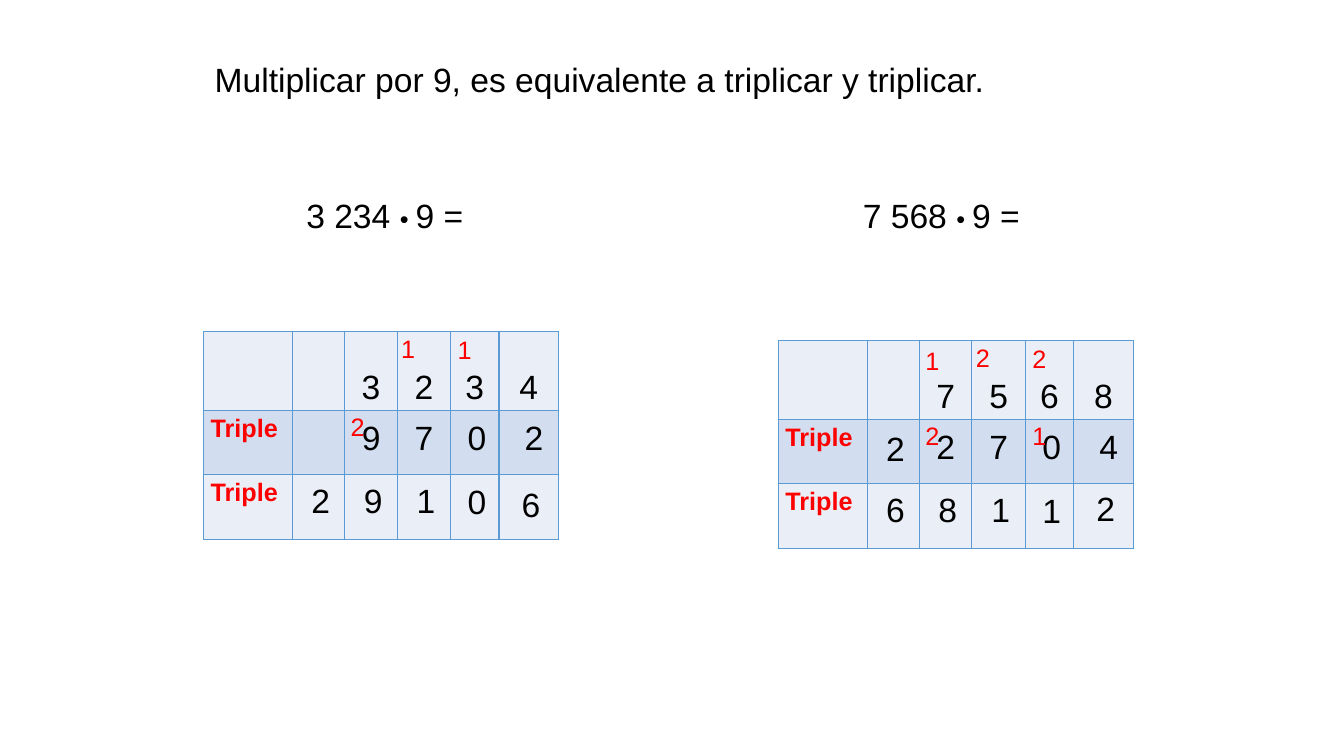
from itertools import accumulate
from lxml.etree import SubElement
from pptx import Presentation
from pptx.dml.color import RGBColor
from pptx.enum.text import MSO_AUTO_SIZE, PP_ALIGN
from pptx.oxml.ns import qn
from pptx.util import Inches, Pt

TITLE = "Multiplicar por 9, es equivalente a triplicar y triplicar."
LABELS = ["", "Triple", "Triple"]
EXERCISES = [
    {
        "at": (2.02, 3.29),
        "question": (2.94, "3 234 "),
        "rows": ["  3234", "  9702", " 29106"],
        "carries": [(0, 3, "1", 0), (0, 4, "1", 0.01), (1, 2, "2", 0)],
        "shifts": {(2, 4): 0.01, (2, 5): 0.04},
    },
    {
        "at": (7.72, 3.38),
        "question": (8.46, "7 568 "),
        "rows": ["  7568", " 22704", " 68112"],
        "carries": [(0, 2, "1", 0.03), (0, 3, "2", 0), (0, 4, "2", 0.01),
                    (1, 2, "2", 0), (1, 4, "1", 0)],
        "shifts": {(1, 1): 0.02, (2, 4): 0.01, (2, 5): -0.01},
    },
]

COLORS = {"text": "000000", "accent": "FF0000", "line": "5B9BD5",
          "light": "EAEFF7", "dark": "D2DEEF"}
COLS = [0.88, 0.52, 0.52, 0.53, 0.48, 0.59]
ROWS = [0.76, 0.64, 0.64]
COL_X = [0, *accumulate(COLS)]
ROW_Y = [0, *accumulate(ROWS)]
DIGIT_W, DIGIT_H = 0.34, 0.5
CARRY_W, CARRY_H = 0.3, 0.42
DIGIT_DX = {1: [0, 0, -0.02, -0.02, 0, 0.03], 2: [0] * 6}
DIGIT_DY = {1: 0.04, 2: 0.02}
CARRY_DX = [0, 0, -0.04, -0.06, -0.03, 0]
CARRY_DY = [-0.08, -0.06]


def write(tf, *runs, size=24, color="text", bold=False, align=None, spaced=False):
    p = tf.paragraphs[0]
    p.alignment = align
    if spaced:
        p.line_spacing, p.space_after = 1.15, Pt(10)
    for run in runs:
        text, run_size = run if isinstance(run, tuple) else (run, size)
        r = p.add_run()
        r.text = text
        r.font.name, r.font.size, r.font.bold = "Arial", Pt(run_size), bold
        r.font.color.rgb = RGBColor.from_string(COLORS[color])


def add_text(slide, x, y, w, h, *runs, wrap=True, **fmt):
    tf = slide.shapes.add_textbox(Inches(x), Inches(y), Inches(w), Inches(h)).text_frame
    tf.word_wrap = wrap
    tf.auto_size = MSO_AUTO_SIZE.SHAPE_TO_FIT_TEXT
    write(tf, *runs, **fmt)


def style_cell(cell, fill):
    tc_pr = cell._tc.get_or_add_tcPr()
    for side in ("a:lnL", "a:lnR", "a:lnT", "a:lnB"):
        ln = SubElement(tc_pr, qn(side), w=str(Pt(1)))
        SubElement(SubElement(ln, qn("a:solidFill")), qn("a:srgbClr"), val=COLORS["line"])
    cell.fill.solid()
    cell.fill.fore_color.rgb = RGBColor.from_string(COLORS[fill])
    cell.margin_left = cell.margin_right = Inches(0.07)
    cell.margin_top = cell.margin_bottom = 0


def add_grid(slide, x, y, rows):
    table = slide.shapes.add_table(len(ROWS), len(COLS), Inches(x), Inches(y),
                                   Inches(sum(COLS)), Inches(sum(ROWS))).table
    table.first_row = table.horz_banding = False
    for column, width in zip(table.columns, COLS):
        column.width = Inches(width)
    for i, height in enumerate(ROWS):
        table.rows[i].height = Inches(height)
        for j, digit in enumerate(rows[i]):
            cell = table.cell(i, j)
            style_cell(cell, "dark" if i % 2 else "light")
            if j == 0 and LABELS[i]:
                write(cell.text_frame, LABELS[i], size=18, color="accent",
                      bold=True, spaced=True)
            elif i == 0 and digit.strip():
                cell.margin_top = Inches(0.32)
                write(cell.text_frame, digit, align=PP_ALIGN.CENTER, spaced=True)


def add_exercise(slide, exercise):
    x, y = exercise["at"]
    question_x, factor = exercise["question"]
    add_text(slide, question_x, 1.88, 1.87, 0.5, factor, ("• ", 18), "9 =")
    add_grid(slide, x, y, exercise["rows"])
    for i in (1, 2):
        for j, digit in enumerate(exercise["rows"][i]):
            if digit.strip():
                left = x + COL_X[j] + (COLS[j] - DIGIT_W) / 2 + DIGIT_DX[i][j]
                top = y + ROW_Y[i] + DIGIT_DY[i] + exercise["shifts"].get((i, j), 0)
                add_text(slide, left, top, DIGIT_W, DIGIT_H, digit)
    for i, j, digit, dy in exercise["carries"]:
        add_text(slide, x + COL_X[j] + CARRY_DX[j], y + ROW_Y[i] + CARRY_DY[i] + dy,
                 CARRY_W, CARRY_H, digit, size=18, color="accent",
                 align=PP_ALIGN.CENTER, spaced=True)


def main():
    prs = Presentation()
    prs.slide_width, prs.slide_height = Inches(13.33), Inches(7.5)
    slide = prs.slides.add_slide(prs.slide_layouts[6])
    add_text(slide, 2.03, 0.48, 7.92, 0.53, TITLE, wrap=False, spaced=True)
    for exercise in EXERCISES:
        add_exercise(slide, exercise)
    prs.save("out.pptx")


if __name__ == "__main__":
    main()
